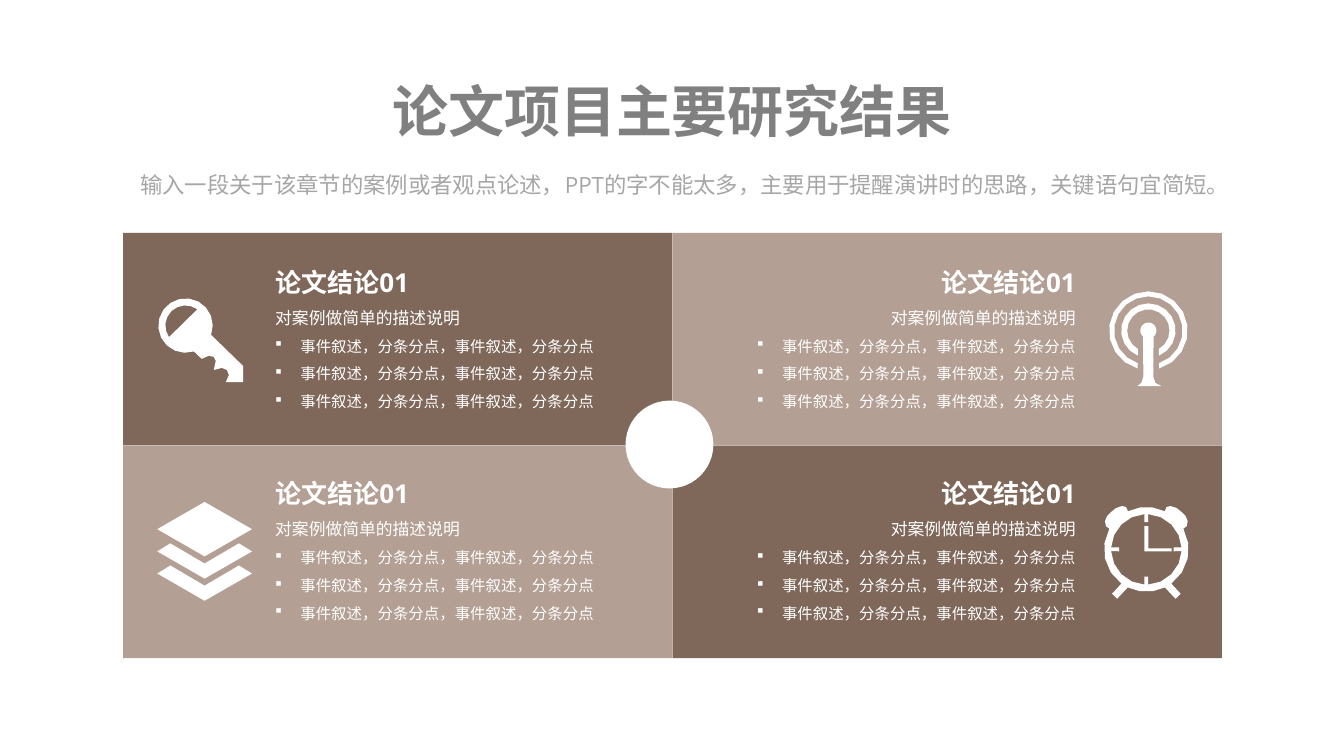
from math import cos, radians, sin

from lxml import etree
from pptx import Presentation
from pptx.dml.color import RGBColor
from pptx.enum.shapes import MSO_SHAPE
from pptx.enum.text import MSO_ANCHOR, MSO_AUTO_SIZE, PP_ALIGN
from pptx.oxml.ns import qn
from pptx.util import Inches, Pt

RECTANGLE, OVAL = MSO_SHAPE.RECTANGLE, MSO_SHAPE.OVAL
LEFT, CENTER, RIGHT = PP_ALIGN.LEFT, PP_ALIGN.CENTER, PP_ALIGN.RIGHT
TOP, MIDDLE = MSO_ANCHOR.TOP, MSO_ANCHOR.MIDDLE
GROW = MSO_AUTO_SIZE.SHAPE_TO_FIT_TEXT

FONT, BULLET_FONT, SQUARE_BULLET = "Open Sans", "Wingdings", "§"
WHITE, DARK, LIGHT = "FFFFFF", "7F685A", "B39F93"
TITLE = "论文项目主要研究结果"
SUBTITLE = "输入一段关于该章节的案例或者观点论述，PPT的字不能太多，主要用于提醒演讲时的思路，关键语句宜简短。"
POINT = "事件叙述，分条分点，事件叙述，分条分点"
CONCLUSION = [
    ("论文结论01", "heading"),
    ("对案例做简单的描述说明", "summary"),
    (POINT, "point"),
    (POINT, "point"),
    (POINT, "point"),
]
STYLES = {
    "title": {"size": Pt(40), "bold": True, "color": "808080"},
    "subtitle": {"size": Pt(16), "bold": False, "color": "A6A6A6"},
    "heading": {"size": Pt(18.6), "bold": True, "color": WHITE},
    "summary": {"size": Pt(12), "bold": False, "color": WHITE},
    "point": {"size": Pt(11), "bold": False, "color": WHITE},
}
PANEL_LEFT, PANEL_TOP, PANEL_WIDTH, PANEL_HEIGHT = 1.22, 2.31, 5.45, 2.11
COLUMNS = [(2.66, LEFT), (7.18, RIGHT)]
TEXT_TOP, TEXT_WIDTH, TEXT_HEIGHT, TEXT_PITCH = 2.61, 3.56, 1.52, 2.1


def arc(center, radius, start, end):
    """Return points along a circle, in degrees clockwise from the right."""
    steps = max(1, round(abs(end - start) / 20))
    angles = [radians(start + (end - start) * step / steps) for step in range(steps + 1)]
    return [(center[0] + radius * cos(a), center[1] + radius * sin(a)) for a in angles]


def open_ring(center, outer, inner, outer_gap, inner_gap):
    """Return a ring outline that is open at the bottom."""
    return (arc(center, outer, 90 + outer_gap, 450 - outer_gap)
            + arc(center, inner, 450 - inner_gap, 90 + inner_gap))


def mirror(points, axis):
    """Return points reflected across a vertical axis, in reverse order."""
    return [(2 * axis - x, y) for x, y in reversed(points)]


def shift_down(points, distance):
    """Return points moved down."""
    return [(x, y + distance) for x, y in points]


BOW = (1.84, 3.23)
KEY_BIT = [
    (2.41, 3.63), (2.41, 3.79), (2.24, 3.79), (2.27, 3.72), (2.25, 3.67),
    (2.2, 3.65), (2.12, 3.67), (2.14, 3.58), (2.12, 3.54), (2.07, 3.53), (2, 3.56),
]
KEY = [[arc(BOW, 0.27, 72, 380) + KEY_BIT, arc(BOW, 0.2, 145, 306)]]

SIGNAL = (11.39, 3.28)
MAST_FOOT = [(11.44, 3.74), (11.46, 3.8), (11.52, 3.83),
             (11.28, 3.83), (11.32, 3.8), (11.34, 3.74)]
ANTENNA = [
    [open_ring(SIGNAL, 0.27, 0.21, 23, 30)],
    [open_ring(SIGNAL, 0.39, 0.34, 16, 18)],
    [arc(SIGNAL, 0.08, 130, 410) + MAST_FOOT],
]

LOWER_LAYER = [(2.03, 5.59), (1.69, 5.39), (1.56, 5.47),
               (2.03, 5.74), (2.5, 5.47), (2.37, 5.39)]
LAYERS = [
    [LOWER_LAYER],
    [shift_down(LOWER_LAYER, 0.22)],
    [[(2.5, 5.25), (2.03, 4.98), (1.56, 5.25), (2.03, 5.52)]],
]

DIAL = (11.37, 5.45)
BELL = [(11.01, 5.25), (10.97, 5.22), (10.96, 5.17), (10.98, 5.12), (11.02, 5.08),
        (11.07, 5.04), (11.13, 5.02), (11.17, 5.03), (11.19, 5.08)]
FOOT = [(11.08, 5.94), (11.03, 5.89)]
CLOCK_CASE = (
    arc(DIAL, 0.42, -29, 54) + mirror(FOOT, DIAL[0])
    + arc(DIAL, 0.42, 64, 116) + FOOT
    + arc(DIAL, 0.42, 126, 209) + BELL
    + arc(DIAL, 0.42, 244, 296) + mirror(BELL, DIAL[0])
)
CLOCK_FACE = [point for turn in range(0, 360, 90)
              for point in arc(DIAL, 0.35, turn + 3, turn + 87)
              + arc(DIAL, 0.27, turn + 86, turn + 94)]
HANDS = [(11.35, 5.22), (11.39, 5.22), (11.39, 5.44),
         (11.62, 5.44), (11.62, 5.47), (11.35, 5.47)]
CLOCK = [[CLOCK_CASE, CLOCK_FACE], [HANDS]]


def color(value):
    """Turn a hex string into a colour."""
    return RGBColor.from_string(value)


def paint(shape, fill):
    """Give a shape a plain fill without line or shadow."""
    shape.shadow.inherit = False
    shape.fill.solid()
    shape.fill.fore_color.rgb = color(fill)
    shape.line.fill.background()


def add_block(slide, kind, box, fill):
    """Add a filled preset shape."""
    shape = slide.shapes.add_shape(kind, *map(Inches, box))
    paint(shape, fill)
    return shape


def add_icon(slide, parts):
    """Draw an icon from parts, each a list of contours."""
    shapes = slide.shapes.add_group_shape().shapes if len(parts) > 1 else slide.shapes
    for contours in parts:
        outlines = [[(Inches(x), Inches(y)) for x, y in contour] for contour in contours]
        builder = shapes.build_freeform(*outlines[0][0])
        builder.add_line_segments(outlines[0][1:])
        for outline in outlines[1:]:
            builder.move_to(*outline[0])
            builder.add_line_segments(outline[1:])
        paint(builder.convert_to_shape(), WHITE)


def add_bullet(paragraph):
    """Give a paragraph a square bullet with a hanging indent."""
    properties = paragraph._p.get_or_add_pPr()
    properties.set("marL", str(Inches(0.25)))
    properties.set("indent", str(-Inches(0.25)))
    etree.SubElement(properties, qn("a:buFont")).set("typeface", BULLET_FONT)
    etree.SubElement(properties, qn("a:buChar")).set("char", SQUARE_BULLET)


def add_text(slide, box, lines, alignment, anchor=TOP):
    """Add a text box with one styled paragraph per line."""
    frame = slide.shapes.add_textbox(*map(Inches, box)).text_frame
    layout = {"word_wrap": True, "auto_size": GROW, "vertical_anchor": anchor,
              "margin_left": Inches(0.07), "margin_right": Inches(0.07),
              "margin_top": Inches(0.03), "margin_bottom": Inches(0.03)}
    for name, value in layout.items():
        setattr(frame, name, value)
    for index, (text, style) in enumerate(lines):
        paragraph = frame.add_paragraph() if index else frame.paragraphs[0]
        paragraph.alignment = alignment
        if style in ("summary", "point"):
            paragraph.line_spacing = 1.5
        if style == "point":
            add_bullet(paragraph)
        run = paragraph.add_run()
        run.text = text
        run.font.name = FONT
        for name, value in STYLES[style].items():
            if name == "color":
                run.font.color.rgb = color(value)
            else:
                setattr(run.font, name, value)


def main():
    """Build the slide of four research conclusions."""
    presentation = Presentation()
    presentation.slide_width, presentation.slide_height = Inches(13.33), Inches(7.5)
    slide = presentation.slides.add_slide(presentation.slide_layouts[6])
    cells = [(column, row) for column in range(2) for row in range(2)]
    for column, row in cells:
        panel = (PANEL_LEFT + column * PANEL_WIDTH, PANEL_TOP + row * PANEL_HEIGHT,
                 PANEL_WIDTH, PANEL_HEIGHT)
        add_block(slide, RECTANGLE, panel, DARK if row == column else LIGHT)
    hub = add_block(slide, OVAL, (6.22, 3.99, 0.84, 0.84), WHITE)
    hub.line.color.rgb = color(WHITE)
    hub.line.width = Pt(2.25)
    for icon in (ANTENNA, CLOCK, KEY, LAYERS):
        add_icon(slide, icon)
    add_text(slide, (0, 0.73, 13.33, 0.74), [(TITLE, "title")], CENTER)
    for column, row in cells:
        text_left, alignment = COLUMNS[column]
        box = (text_left, TEXT_TOP + row * TEXT_PITCH, TEXT_WIDTH, TEXT_HEIGHT)
        add_text(slide, box, CONCLUSION, alignment)
    add_text(slide, (0.93, 1.66, 11.73, 0.34), [(SUBTITLE, "subtitle")], CENTER, MIDDLE)
    presentation.save("out.pptx")


if __name__ == "__main__":
    main()
